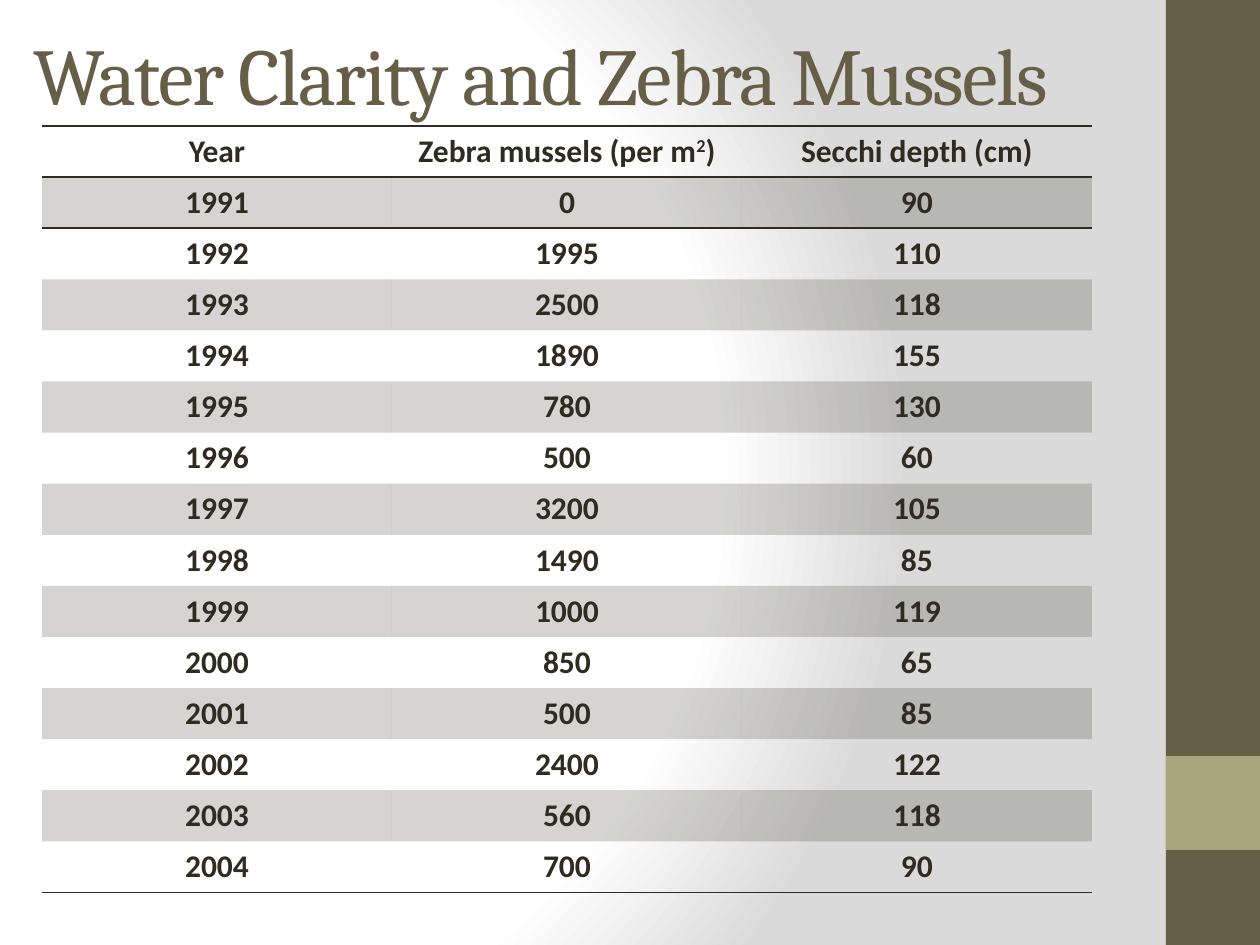
from dataclasses import dataclass

from lxml import etree
from pptx import Presentation
from pptx.dml.color import RGBColor
from pptx.enum.shapes import MSO_SHAPE
from pptx.enum.text import MSO_ANCHOR, MSO_AUTO_SIZE, PP_ALIGN
from pptx.oxml import parse_xml
from pptx.oxml.ns import nsdecls, qn
from pptx.util import Emu, Pt

RECTANGLE = MSO_SHAPE.RECTANGLE
MIDDLE = MSO_ANCHOR.MIDDLE
LEFT, CENTER = PP_ALIGN.LEFT, PP_ALIGN.CENTER
NO_AUTOFIT = MSO_AUTO_SIZE.NONE
TITLE_ONLY_LAYOUT = 5
EMU_PER_PX = 914400 / 126
PLAIN_TABLE_STYLE = "{2D5ABB26-0587-4C30-8999-92F81FD0307C}"


@dataclass(frozen=True)
class Theme:
    brown: str = "675E47"
    olive: str = "A9A57C"
    ink: str = "2F2B20"
    gradient: tuple = ((0, "FFFFFF"), (75, "FFFFFF"), (100, "DADADA"))
    band_opacity: int = 20
    title_font: str = "Cambria"
    table_font: str = "Calibri"
    title_size: int = 46
    table_size: int = 18
    border_width: int = 1


THEME = Theme()

TITLE = "Water Clarity and Zebra Mussels"
SUPERSCRIPT = "2"
HEADERS = (("Year",), ("Zebra mussels (per m", SUPERSCRIPT, ")"), ("Secchi depth (cm)",))
FIRST_YEAR = 1991
MUSSELS = (0, 1995, 2500, 1890, 780, 500, 3200, 1490, 1000, 850, 500, 2400, 560, 700)
SECCHI_DEPTHS = (90, 110, 118, 155, 130, 60, 105, 85, 119, 65, 85, 122, 118, 90)


def px(length):
    return Emu(round(length * EMU_PER_PX))


def color(value):
    return RGBColor.from_string(value)


def set_background(slide):
    """Fill the slide with a circular gradient centred left of the middle."""
    stops = "".join(
        f'<a:gs pos="{position * 1000}"><a:srgbClr val="{value}"/></a:gs>'
        for position, value in THEME.gradient
    )
    background = parse_xml(
        f'<p:bg {nsdecls("p", "a")}><p:bgPr><a:gradFill rotWithShape="1">'
        f'<a:gsLst>{stops}</a:gsLst><a:path path="circle">'
        '<a:fillToRect l="20000" t="50000" r="100000" b="50000"/></a:path>'
        "</a:gradFill><a:effectLst/></p:bgPr></p:bg>"
    )
    slide.element.cSld.insert(0, background)


def add_panel(slide, top, height, fill):
    """Add a block of the side bar at the right edge."""
    shape = slide.shapes.add_shape(RECTANGLE, px(1166), px(top), px(94), px(height))
    shape.shadow.inherit = False
    shape.fill.solid()
    shape.fill.fore_color.rgb = color(fill)
    shape.line.fill.background()


def format_run(run, font, size, value):
    run.font.name = font
    run.font.size = Pt(size)
    run.font.color.rgb = color(value)


def set_title(slide):
    title = slide.shapes.title
    title.left, title.top, title.width, title.height = map(px, (21, 21, 1092, 105))
    text_frame = title.text_frame
    text_frame.text = TITLE
    text_frame.vertical_anchor = MIDDLE
    text_frame.auto_size = NO_AUTOFIT
    paragraph = text_frame.paragraphs[0]
    paragraph.alignment = LEFT
    run = paragraph.runs[0]
    format_run(run, THEME.title_font, THEME.title_size, THEME.brown)
    run.font._element.set("spc", "-100")


def write_cell(cell, parts):
    paragraph = cell.text_frame.paragraphs[0]
    paragraph.alignment = CENTER
    for part in parts:
        run = paragraph.add_run()
        run.text = part
        format_run(run, THEME.table_font, THEME.table_size, THEME.ink)
        run.font.bold = True
        if len(parts) > 1 and part == SUPERSCRIPT:
            run.font._element.set("baseline", "30000")


def fill_cell(cell, banded):
    if not banded:
        cell.fill.background()
        return
    cell.fill.solid()
    cell.fill.fore_color.rgb = color(THEME.ink)
    solid_color = cell._tc.tcPr.find(".//" + qn("a:srgbClr"))
    alpha = etree.SubElement(solid_color, qn("a:alpha"))
    alpha.set("val", str(THEME.band_opacity * 1000))


def draw_borders(cell, sides):
    """Draw cell borders; sides are tag names in schema order, ahead of the fill."""
    for index, side in enumerate(sides):
        border = parse_xml(
            f'<a:{side} {nsdecls("a")} w="{Pt(THEME.border_width)}"><a:solidFill>'
            f'<a:srgbClr val="{THEME.ink}"/></a:solidFill></a:{side}>'
        )
        cell._tc.get_or_add_tcPr().insert(index, border)


def add_data_table(slide):
    records = [
        [(str(value),) for value in (FIRST_YEAR + index, mussels, depth)]
        for index, (mussels, depth) in enumerate(zip(MUSSELS, SECCHI_DEPTHS))
    ]
    rows = [HEADERS, *records]
    last_row = len(rows) - 1
    frame = slide.shapes.add_table(
        len(rows), len(HEADERS), px(42), px(126), px(1050), px(766)
    )
    table = frame.table
    table.horz_banding = False
    table._tbl.tblPr.find(qn("a:tableStyleId")).text = PLAIN_TABLE_STYLE
    borders = {0: ("lnT", "lnB"), 1: ("lnT",), last_row: ("lnB",)}
    for row_index, row in enumerate(rows):
        for column_index, parts in enumerate(row):
            cell = table.cell(row_index, column_index)
            write_cell(cell, parts)
            fill_cell(cell, banded=row_index % 2 == 1)
            draw_borders(cell, borders.get(row_index, ()))


def main():
    presentation = Presentation()
    presentation.slide_width, presentation.slide_height = px(1260), px(945)
    slide = presentation.slides.add_slide(presentation.slide_layouts[TITLE_ONLY_LAYOUT])
    set_background(slide)
    add_panel(slide, 0, 945, THEME.brown)
    add_panel(slide, 756, 94, THEME.olive)
    set_title(slide)
    add_data_table(slide)
    presentation.save("out.pptx")


if __name__ == "__main__":
    main()
